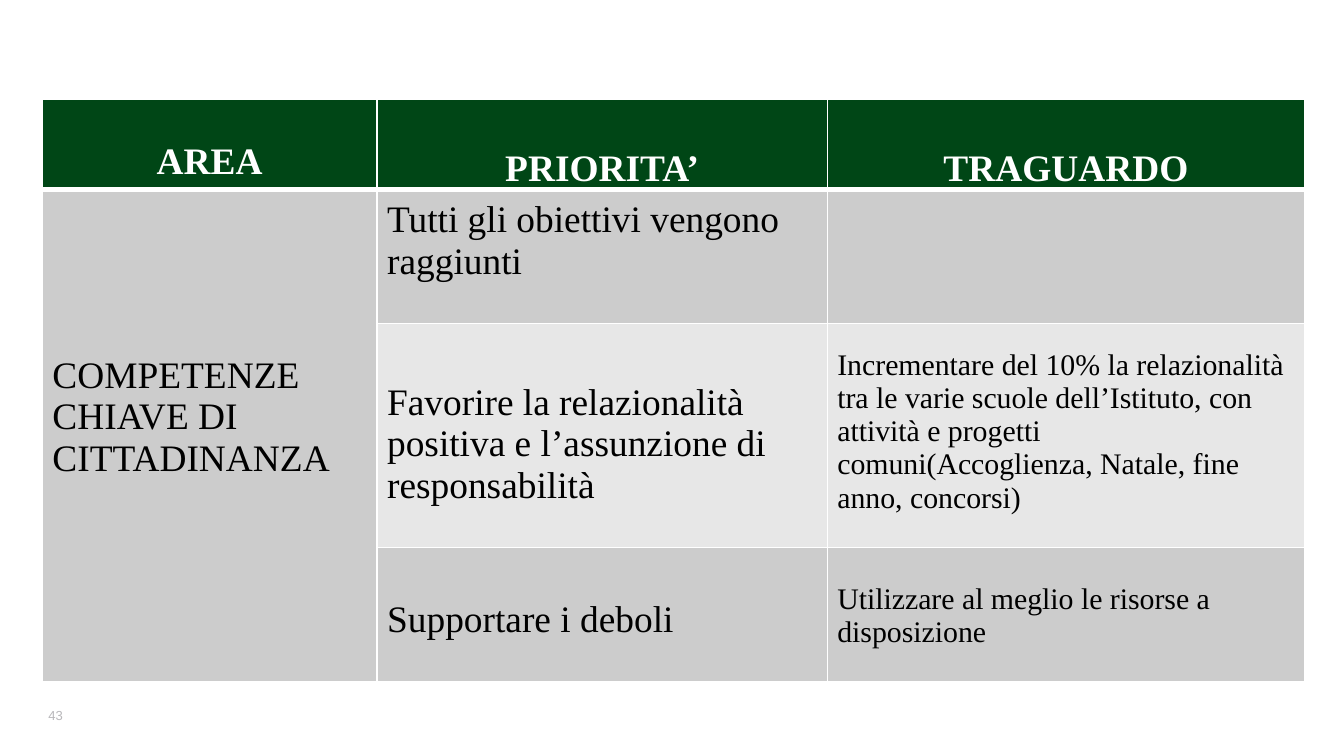
import pptx
import pptx.util
import pptx.dml.color
import pptx.enum.text
import pptx.oxml.ns
import lxml.etree

Pt = pptx.util.Pt
ALIGN = pptx.enum.text.PP_ALIGN
ANCHOR = pptx.enum.text.MSO_ANCHOR

COLORS = {"head": "004616", "dark": "CCCCCC", "light": "E7E7E7",
          "white": "FFFFFF", "black": "000000", "gray": "B9B8BB"}
BANDS = ["head", "dark", "light", "dark"]
WIDTHS = [179.3, 241.2, 255.8]
HEIGHTS = [48, 72, 120, 72]
LINE = 1.11  # line height of the serif font, in ems


def color(name):
    return pptx.dml.color.RGBColor.from_string(COLORS[name])


def style(para, font, size, tone, bold=False):
    para.font.name = font
    para.font.size = Pt(size)
    para.font.bold = bold
    para.font.color.rgb = color(tone)


def border(cell, sides):
    """Draw white rules; sides maps L, R, T, B to widths in points."""
    props = cell._tc.get_or_add_tcPr()
    for spot, side in enumerate("LRTB"):
        line = lxml.etree.Element(pptx.oxml.ns.qn("a:ln" + side),
                                  w=str(Pt(sides[side])))
        fill = lxml.etree.SubElement(line, pptx.oxml.ns.qn("a:solidFill"))
        lxml.etree.SubElement(fill, pptx.oxml.ns.qn("a:srgbClr"),
                              val=COLORS["white"])
        props.insert(spot, line)


def write(cell, text, size=20, above=0, below=0, top=False, head=False):
    """Fill a cell; above and below are gaps counted in text lines."""
    cell.margin_top = Pt(above * size * LINE)
    cell.margin_bottom = Pt(below * size * LINE)
    cell.vertical_anchor = ANCHOR.TOP if top else ANCHOR.BOTTOM
    para = cell.text_frame.paragraphs[0]
    para.text = text
    para.alignment = ALIGN.CENTER if head else ALIGN.LEFT
    style(para, "Times New Roman", size, "white" if head else "black", head)


def add_grid(slide):
    frame = slide.shapes.add_table(len(HEIGHTS), len(WIDTHS), Pt(22.7),
                                   Pt(53.4), Pt(sum(WIDTHS)), Pt(sum(HEIGHTS)))
    table = frame.table
    for col, width in zip(table.columns, WIDTHS):
        col.width = Pt(width)
    for row, height in zip(table.rows, HEIGHTS):
        row.height = Pt(height)

    # Fills and rules, with a thick rule under the header
    for r, band in enumerate(BANDS):
        for c in range(len(WIDTHS)):
            cell = table.cell(r, c)
            cell.margin_left = cell.margin_right = Pt(5.4)
            cell.fill.solid()
            cell.fill.fore_color.rgb = color("dark" if r and c == 0 else band)
            border(cell, {"L": 1, "R": 1, "T": 3 if r == 1 else 1,
                          "B": 3 if r == 0 else 1})
    table.cell(1, 0).merge(table.cell(3, 0))
    return table


def add_number(slide, text):
    box = slide.shapes.add_textbox(Pt(25.9), Pt(377.3), Pt(25.2), Pt(11.5))
    frame = box.text_frame
    frame.margin_left = 0
    frame.margin_top = frame.margin_bottom = Pt(3.6)
    frame.word_wrap = False
    frame.vertical_anchor = ANCHOR.MIDDLE
    para = frame.paragraphs[0]
    para.text = text
    style(para, "Arial", 7, "gray")


def main():
    deck = pptx.Presentation()
    deck.slide_width, deck.slide_height = Pt(720), Pt(405)
    slide = deck.slides.add_slide(deck.slide_layouts[6])
    table = add_grid(slide)

    # Header
    write(table.cell(0, 0), "AREA", above=1, top=True, head=True)
    write(table.cell(0, 1), "PRIORITA’", head=True)
    write(table.cell(0, 2), "TRAGUARDO", head=True)

    # Area
    write(table.cell(1, 0), "COMPETENZE CHIAVE DI CITTADINANZA",
          above=4, top=True)

    # Priorities
    goals = ["Tutti gli obiettivi vengono raggiunti",
             "Favorire la relazionalità positiva e l’assunzione di "
             "responsabilità",
             "Supportare i deboli"]
    for r, goal in enumerate(goals, 1):
        write(table.cell(r, 1), goal, below=1)

    # Targets
    aims = ["Incrementare del 10% la relazionalità tra le varie scuole "
            "dell’Istituto, con attività e progetti comuni(Accoglienza, "
            "Natale, fine anno, concorsi)",
            "Utilizzare al meglio le risorse a disposizione"]
    for r, aim in enumerate(aims, 2):
        write(table.cell(r, 2), aim, size=16, below=1)

    add_number(slide, "43")
    deck.save("out.pptx")


if __name__ == "__main__":
    main()
